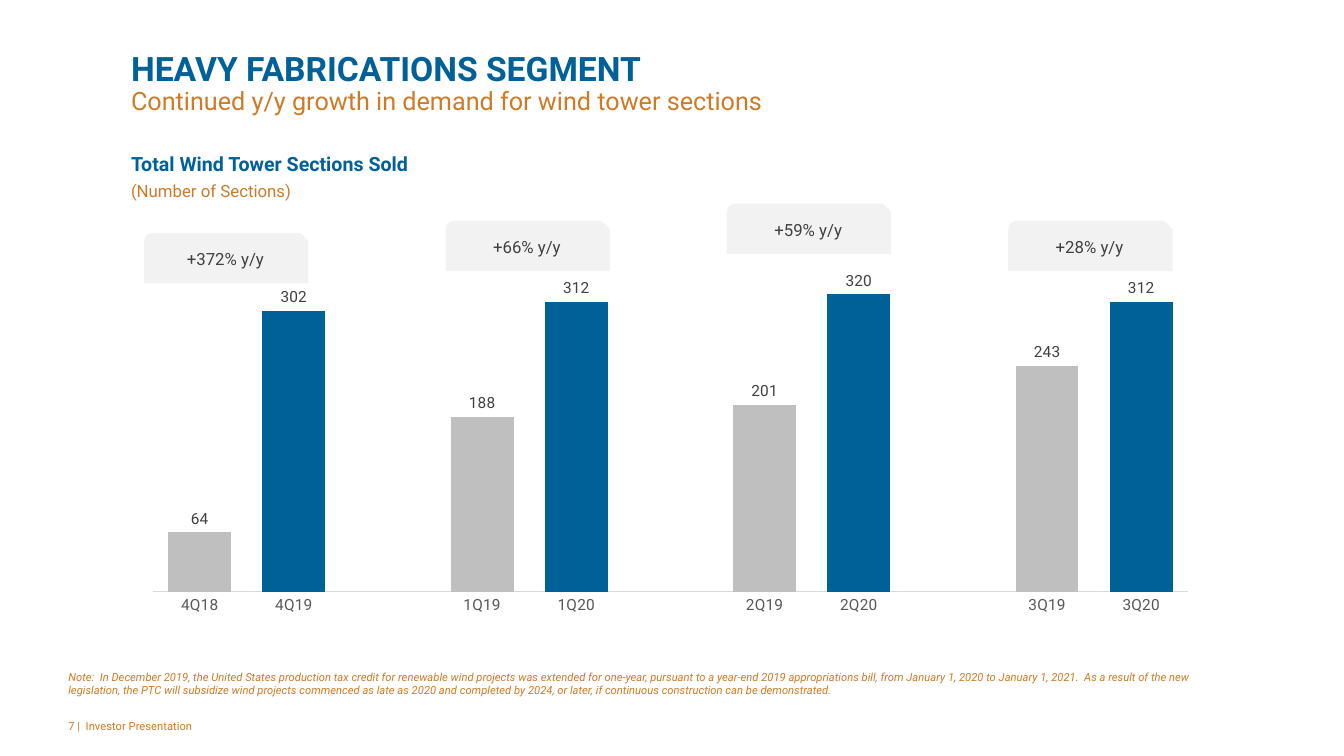
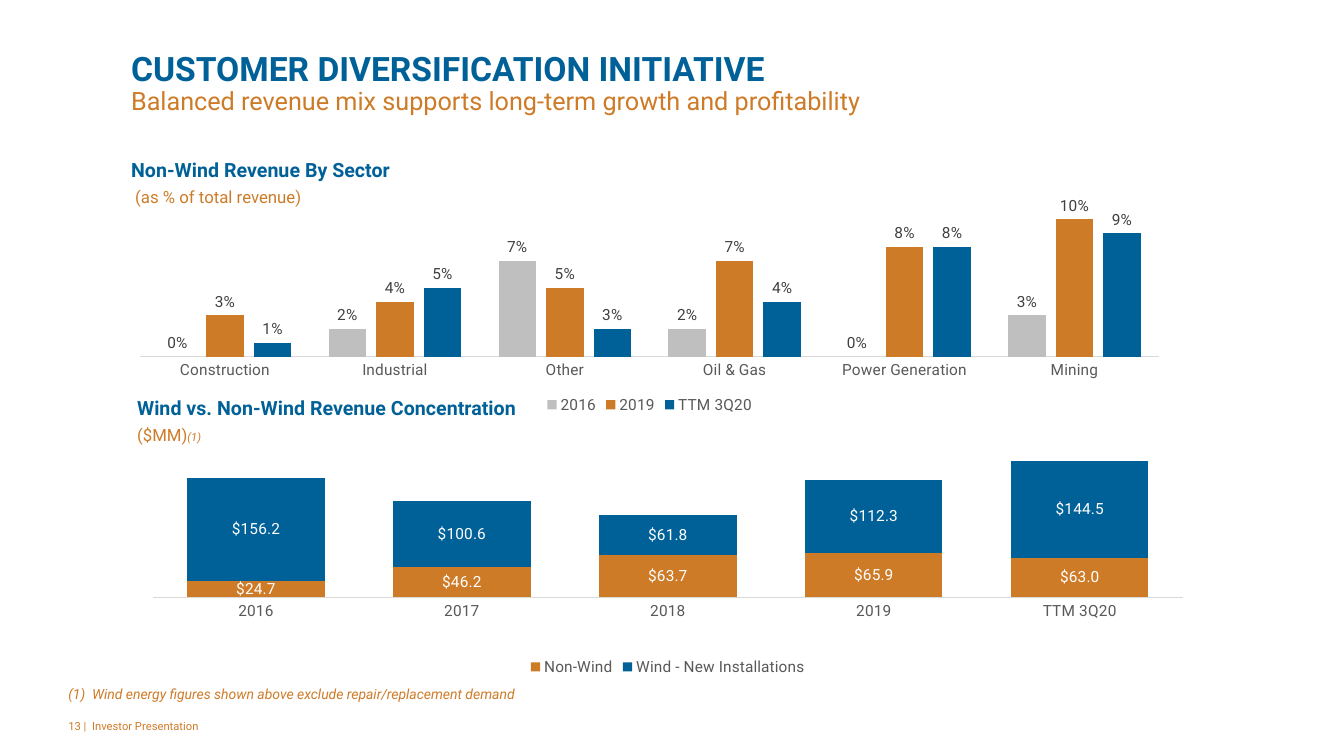
from pptx import Presentation, util as u
from pptx.chart import data as cd
from pptx.dml.color import RGBColor
from pptx.enum import chart as ec, shapes, text
from pptx.oxml import parse_xml
from pptx.oxml.ns import nsdecls

FONT = "Roboto"
BLUE, ORANGE, GRAY = "006198", "CE7B28", "BFBFBF"
DARK, MID, PALE, RULE, WHITE = "404040", "595959", "F2F2F2", "D9D9D9", "FFFFFF"
KIND = ec.XL_CHART_TYPE
SPOT = ec.XL_LABEL_POSITION


def color(code):
    return RGBColor.from_string(code)


def style(font, size=11, tint=DARK, bold=False, italic=False):
    font.name, font.size = FONT, u.Pt(size)
    font.bold, font.italic = bold, italic
    font.color.rgb = color(tint)


def write(para, words, **form):
    run = para.add_run()
    run.text = words
    style(run.font, **form)


def place(shape, box):
    shape.left, shape.top, shape.width, shape.height = map(u.Inches, box)


class Deck:
    """Holds the shared style and the current slide."""

    def __init__(self):
        self.prs = Presentation()
        self.prs.slide_width = u.Inches(13.33)
        self.prs.slide_height = u.Inches(7.5)

    def page(self, number, title, subtitle):
        self.slide = self.prs.slides.add_slide(self.prs.slide_layouts[5])
        head = self.slide.shapes.title
        place(head, (1.3, 0.52, 10.81, 0.63))
        frame = self.frame(head, text.MSO_ANCHOR.BOTTOM, inset=0)
        para = frame.paragraphs[0]
        para.alignment = text.PP_ALIGN.LEFT
        para.line_spacing = 0.9
        write(para, title, size=24, tint=BLUE, bold=True)
        para.add_line_break()
        write(para, subtitle, size=18, tint=ORANGE)
        self.note(f"{number} |  Investor Presentation", 7, width=3, italic=False)

    def frame(self, shape, anchor, inset=None):
        frame = shape.text_frame
        frame.word_wrap = True
        frame.auto_size = text.MSO_AUTO_SIZE.NONE
        frame.vertical_anchor = anchor
        if inset is not None:
            frame.margin_left = frame.margin_right = u.Inches(inset)
            frame.margin_top = frame.margin_bottom = u.Inches(inset)
        return frame

    def note(self, words, top, width=11.54, size=8, italic=True):
        box = self.slide.shapes.add_textbox(
            *map(u.Inches, (0.58, top, width, 0.4)))
        frame = self.frame(box, text.MSO_ANCHOR.MIDDLE)
        write(frame.paragraphs[0], words, size=size, tint=ORANGE, italic=italic)

    def shape(self, kind, box, fill):
        item = self.slide.shapes.add_shape(kind, *map(u.Inches, box))
        item.shadow.inherit = False
        item.fill.solid()
        item.fill.fore_color.rgb = color(fill)
        item.line.fill.background()
        return item

    def heading(self, box, title, unit, mark=None):
        item = self.shape(shapes.MSO_SHAPE.RECTANGLE, box, WHITE)
        frame = self.frame(item, text.MSO_ANCHOR.TOP, inset=0)
        first, second = frame.paragraphs[0], frame.add_paragraph()
        for para in (first, second):
            para.alignment = text.PP_ALIGN.LEFT
            para.space_after = u.Pt(3.3)
        write(first, title, size=14, tint=BLUE, bold=True)
        write(second, unit, size=12, tint=ORANGE)
        if mark:
            write(second, mark, size=8, tint=ORANGE, italic=True)

    def badge(self, left, top, words):
        item = self.shape(shapes.MSO_SHAPE.SNIP_ROUND_RECTANGLE,
                          (left, top, 1.63, 0.5), PALE)
        para = self.frame(item, text.MSO_ANCHOR.MIDDLE).paragraphs[0]
        para.alignment = text.PP_ALIGN.CENTER
        write(para, words, size=12)

    def chart(self, kind, box, cats, rows, top, gap, overlap,
              form="General", tint=DARK, spot=SPOT.OUTSIDE_END, legend=True):
        """Each row is name, colour, values and a dict of special labels."""
        data = cd.CategoryChartData(number_format=form)
        data.categories = cats
        for name, _, vals, _ in rows:
            data.add_series(name, vals)
        chart = self.slide.shapes.add_chart(
            kind, *map(u.Inches, box), data).chart
        style(chart.font, tint="000000")
        chart.has_title = False
        chart.has_legend = legend
        if legend:
            chart.legend.position = ec.XL_LEGEND_POSITION.BOTTOM
            chart.legend.include_in_layout = False
            style(chart.legend.font, tint=MID)

        # Axes
        cat, val = chart.category_axis, chart.value_axis
        cat.major_tick_mark = ec.XL_TICK_MARK.NONE
        cat.format.line.color.rgb = color(RULE)
        cat.format.line.width = u.Pt(0.75)
        style(cat.tick_labels.font, tint=MID)
        val.visible = val.has_major_gridlines = False
        val.minimum_scale, val.maximum_scale = 0, top

        # Bars and labels
        plot = chart.plots[0]
        plot.vary_by_categories = False
        plot.gap_width, plot.overlap = gap, overlap
        for bars, (_, fill, _, extra) in zip(plot.series, rows):
            self.paint(bars, fill)
            tags = bars.data_labels
            tags.show_value = True
            tags.number_format, tags.number_format_is_linked = form, False
            tags.position = spot
            style(tags.font, tint=tint)
            for i, words in extra.items():
                tag = bars.points[i].data_label
                write(tag.text_frame.paragraphs[0], words, tint=tint)
                tag.position = spot
        return chart

    def paint(self, item, fill):
        item.format.fill.solid()
        item.format.fill.fore_color.rgb = color(fill)

    def layout(self, chart, *box):
        """Fix the inner plot area as fractions of the chart."""
        area = chart._chartSpace.chart.plotArea
        for old in area.findall("{*}layout"):
            area.remove(old)
        parts = "".join(f'<c:{tag} val="{val}"/>' for tag, val in zip("xywh", box))
        area.insert(0, parse_xml(
            f'<c:layout {nsdecls("c")}><c:manualLayout>'
            '<c:layoutTarget val="inner"/><c:xMode val="edge"/>'
            f'<c:yMode val="edge"/>{parts}</c:manualLayout></c:layout>'))


def towers(deck):
    deck.page(7, "HEAVY FABRICATIONS SEGMENT",
              "Continued y/y growth in demand for wind tower sections")
    deck.heading((1.3, 1.51, 6.23, 0.48),
                 "Total Wind Tower Sections Sold", "(Number of Sections)")
    deck.note(
        "Note:  In December 2019, the United States production tax credit for "
        "renewable wind projects was extended for one-year, pursuant to a "
        "year-end 2019 appropriations bill, from January 1, 2020 to January 1, "
        "2021.  As a result of the new legislation, the PTC will subsidize wind "
        "projects commenced as late as 2020 and completed by 2024, or later, if "
        "continuous construction can be demonstrated.", 6.58)

    # Pairs of quarters, parted by an empty category
    cats = ["4Q18", "4Q19", "", "1Q19", "1Q20", "", "2Q19", "2Q20", "",
            "3Q19", "3Q20"]
    vals = [64, 302, None, 188, 312, None, 201, 320, None, 243, 312]
    chart = deck.chart(KIND.COLUMN_CLUSTERED, (1.3, 2.57, 10.7, 3.6), cats,
                       [("Series 1", GRAY, vals, {})], 350, 50, -27,
                       legend=False)
    for i in range(1, len(cats), 3):
        deck.paint(chart.plots[0].series[0].points[i], BLUE)

    for left, top, rise in ((1.43, 2.31, 372), (4.42, 2.19, 66),
                            (7.21, 2.02, 59), (10, 2.19, 28)):
        deck.badge(left, top, f"+{rise}% y/y")


def mix(deck):
    deck.page(13, "CUSTOMER DIVERSIFICATION INITIATIVE",
              "Balanced revenue mix supports long-term growth and profitability")
    deck.heading((1.36, 3.93, 4.19, 0.48),
                 "Wind vs. Non-Wind Revenue Concentration", "($MM)", "(1)")
    deck.heading((1.3, 1.57, 4.19, 0.48),
                 "Non-Wind Revenue By Sector", " (as % of total revenue)")
    deck.note("(1)  Wind energy figures shown above exclude "
              "repair/replacement demand", 6.68, size=10)

    # Share of revenue by sector
    deck.chart(
        KIND.COLUMN_CLUSTERED, (1.18, 1.86, 10.53, 2.29),
        ["Construction", "Industrial", "Other", "Oil & Gas",
         "Power Generation", "Mining"],
        [("2016", GRAY, [0, 0.02, 0.07, 0.02, 0, 0.03], {}),
         ("2019", ORANGE, [0.03, 0.04, 0.05, 0.07, 0.08, 0.1], {}),
         ("TTM 3Q20", BLUE, [0.01, 0.05, 0.02, 0.04, 0.08, 0.09], {2: "3%"})],
        0.12, 100, -27, form="0%")

    # Wind against non-wind
    chart = deck.chart(
        KIND.COLUMN_STACKED, (1.36, 4.15, 10.53, 2.6),
        ["2016", "2017", "2018", "2019", "TTM 3Q20"],
        [("Non-Wind", ORANGE, [24.7, 46.2, 63.7, 67.4, 59.9],
          {3: "$65.9", 4: "$63.0"}),
         ("Wind - New Installations", BLUE, [156.2, 100.6, 61.8, 110.9, 147.6],
          {3: "$112.3", 4: "$144.5"})],
        250, 50, 100, form='"$"#,##0.0', tint=WHITE, spot=SPOT.CENTER)
    deck.layout(chart, 0.015, 0.054, 0.97, 0.63)


def main():
    deck = Deck()
    towers(deck)
    mix(deck)
    deck.prs.save("out.pptx")


if __name__ == "__main__":
    main()
